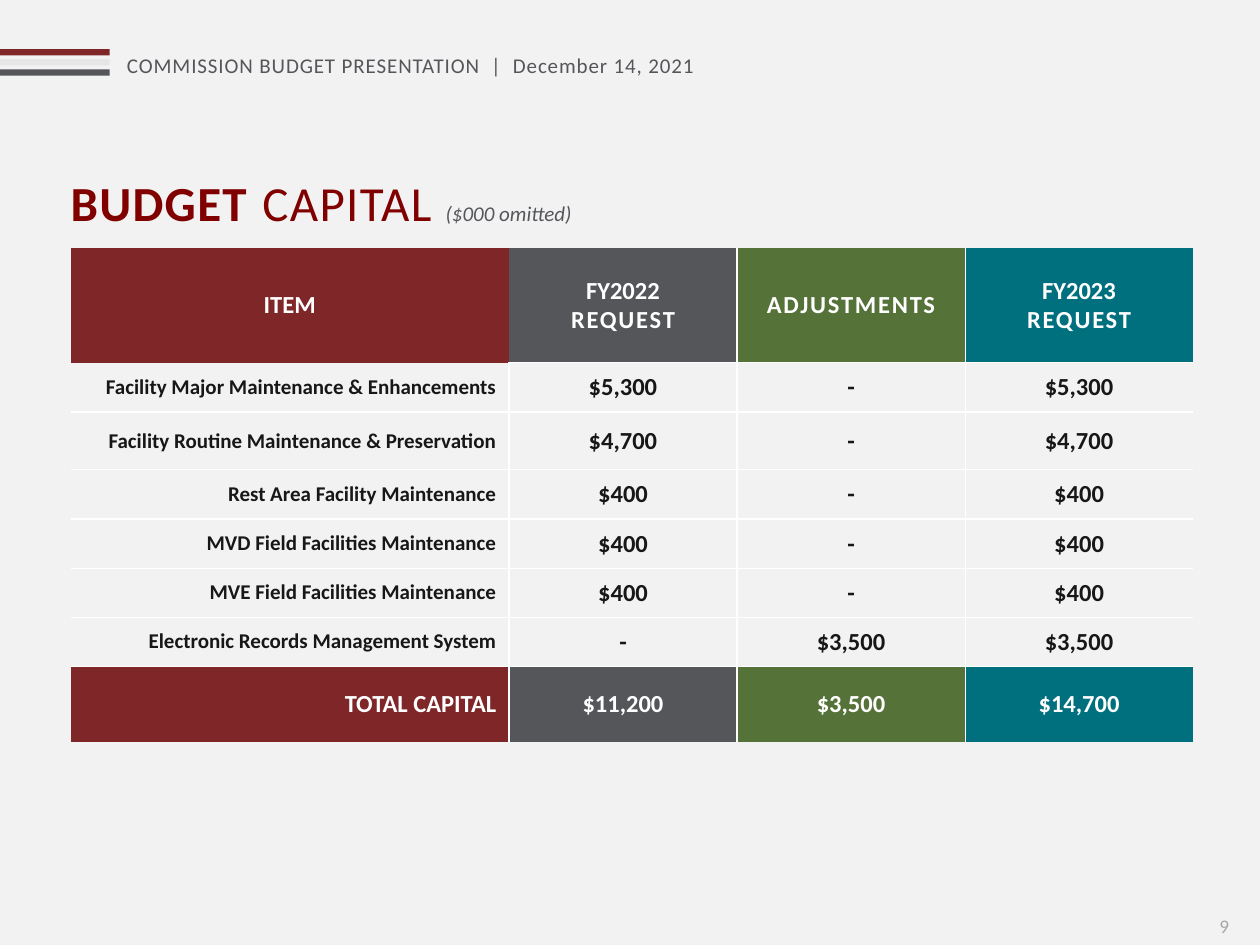
from lxml.etree import SubElement
from pptx import Presentation
from pptx.dml.color import RGBColor
from pptx.enum.shapes import MSO_SHAPE
from pptx.enum.text import MSO_ANCHOR, MSO_AUTO_SIZE, PP_ALIGN
from pptx.oxml.ns import qn
from pptx.util import Inches, Pt

BACKGROUND = RGBColor(0xF2, 0xF2, 0xF2)
WHITE = RGBColor(0xFF, 0xFF, 0xFF)
INK = RGBColor(0x18, 0x17, 0x17)
MAROON = RGBColor(0x80, 0x00, 0x00)
RED = RGBColor(0x7F, 0x26, 0x29)
GRAY = RGBColor(0x54, 0x56, 0x5A)
HEADER_GRAY = RGBColor(0x55, 0x56, 0x5A)
LIGHT_GRAY = RGBColor(0xE7, 0xE6, 0xE6)
NUMBER_GRAY = RGBColor(0xA7, 0xA8, 0xA9)
GREEN = RGBColor(0x55, 0x72, 0x38)
TEAL = RGBColor(0x00, 0x70, 0x7F)

FONT = "Calibri"
NO_STYLE = "{2D5ABB26-0587-4C30-8999-92F81FD0307C}"
COLUMN_COLORS = [RED, GRAY, GREEN, TEAL]
COLUMN_WIDTHS = [3.48, 1.81, 1.81, 1.81]
ROW_HEIGHTS = [0.91, 0.39, 0.46, 0.39, 0.39, 0.39, 0.39, 0.6]

HEADINGS = [["ITEM"], ["FY2022", "REQUEST"], ["ADJUSTMENTS"], ["FY2023", "REQUEST"]]
SPACED_HEADINGS = {"REQUEST", "ADJUSTMENTS"}
ITEMS = [
    ["Facility Major Maintenance & Enhancements", "$5,300", "-", "$5,300"],
    ["Facility Routine Maintenance & Preservation", "$4,700", "-", "$4,700"],
    ["Rest Area Facility Maintenance", "$400", "-", "$400"],
    ["MVD Field Facilities Maintenance", "$400", "-", "$400"],
    ["MVE Field Facilities Maintenance", "$400", "-", "$400"],
    ["Electronic Records Management System", "-", "$3,500", "$3,500"],
]
TOTALS = ["TOTAL CAPITAL", "$11,200", "$3,500", "$14,700"]


def add_text(paragraph, text, *, size, color, bold=False, italic=False,
             spacing=0, align=PP_ALIGN.LEFT):
    """Add one formatted run; spacing is in points."""
    paragraph.alignment = align
    run = paragraph.add_run()
    run.text = text
    font = run.font
    font.name, font.size = FONT, Pt(size)
    font.bold, font.italic = bold, italic
    font.color.rgb = color
    run._r.get_or_add_rPr().set("spc", str(round(spacing * 100)))


def add_text_box(slide, left, top, width, height, text, **text_format):
    frame = slide.shapes.add_textbox(
        Inches(left), Inches(top), Inches(width), Inches(height)).text_frame
    frame.word_wrap = True
    add_text(frame.paragraphs[0], text, **text_format)


def add_stripe(slide, top, color):
    shape = slide.shapes.add_shape(
        MSO_SHAPE.RECTANGLE, 0, Inches(top), Inches(0.87), Inches(0.05))
    shape.shadow.inherit = False
    shape.fill.solid()
    shape.fill.fore_color.rgb = color
    shape.line.fill.background()


def add_title(slide):
    title = slide.shapes.title
    title.left, title.top = Inches(0.46), Inches(1.26)
    title.width, title.height = Inches(9.02), Inches(0.64)
    frame = title.text_frame
    frame.vertical_anchor = MSO_ANCHOR.TOP
    frame.auto_size = MSO_AUTO_SIZE.NONE
    frame.word_wrap = True
    paragraph = frame.paragraphs[0]
    add_text(paragraph, "BUDGET", size=28, color=MAROON, bold=True, spacing=0.8)
    add_text(paragraph, " ", size=32, color=MAROON, bold=True, spacing=0.8)
    add_text(paragraph, "CAPITAL ", size=28, color=MAROON, spacing=0.8)
    add_text(paragraph, "($000 omitted)", size=12, color=GRAY, italic=True)


def add_borders(cell, sides):
    """Draw thin white lines on the given sides (L, R, T, B, in that order)."""
    properties = cell._tc.get_or_add_tcPr()
    for side in sides:
        line = SubElement(properties, qn(f"a:ln{side}"), w=str(Pt(0.75)))
        fill = SubElement(line, qn("a:solidFill"))
        SubElement(fill, qn("a:srgbClr"), val=str(WHITE))


def inner_sides(row, column):
    """Sides that face another cell; the ITEM heading has no lines."""
    if (row, column) == (0, 0):
        return ""
    sides = {
        "L": column > 0 and (row, column) != (0, 1),
        "R": column < len(COLUMN_WIDTHS) - 1,
        "T": row > 0 and (row, column) != (1, 0),
        "B": row < len(ROW_HEIGHTS) - 1,
    }
    return "".join(side for side, shown in sides.items() if shown)


def fill_cell(cell, lines, *, fill=None, **text_format):
    cell.vertical_anchor = MSO_ANCHOR.MIDDLE
    if fill is None:
        cell.fill.background()
    else:
        cell.fill.solid()
        cell.fill.fore_color.rgb = fill
    frame = cell.text_frame
    for index, line in enumerate(lines):
        paragraph = frame.add_paragraph() if index else frame.paragraphs[0]
        add_text(paragraph, line, bold=True,
                 spacing=1 if line in SPACED_HEADINGS else 0, **text_format)


def add_budget_table(slide):
    table_frame = slide.shapes.add_table(
        len(ROW_HEIGHTS), len(COLUMN_WIDTHS), Inches(0.56), Inches(1.97),
        Inches(sum(COLUMN_WIDTHS)), Inches(sum(ROW_HEIGHTS)))
    table = table_frame.table
    table._tbl.tblPr.find(qn("a:tableStyleId")).text = NO_STYLE
    table.horz_banding = False
    for column, width in zip(table.columns, COLUMN_WIDTHS):
        column.width = Inches(width)
    for row, height in zip(table.rows, ROW_HEIGHTS):
        row.height = Inches(height)

    rows = [HEADINGS] + [[[text] for text in texts] for texts in ITEMS + [TOTALS]]
    last = len(rows) - 1
    for r, row in enumerate(rows):
        for c, lines in enumerate(row):
            cell = table.cell(r, c)
            add_borders(cell, inner_sides(r, c))
            colored = r in (0, last)
            is_label = c == 0 and r > 0
            if r == 0:
                cell.margin_left = cell.margin_right = Inches(0.05)
            fill_cell(cell, lines,
                      fill=COLUMN_COLORS[c] if colored else None,
                      color=WHITE if colored else INK,
                      size=12 if is_label and not colored else 14,
                      align=PP_ALIGN.RIGHT if is_label else PP_ALIGN.CENTER)


def main():
    presentation = Presentation()
    presentation.slide_width, presentation.slide_height = Inches(10), Inches(7.5)
    slide = presentation.slides.add_slide(presentation.slide_layouts[5])
    slide.background.fill.solid()
    slide.background.fill.fore_color.rgb = BACKGROUND

    # Page header
    add_text_box(slide, 0.91, 0.37, 4.84, 0.5,
                 "COMMISSION BUDGET PRESENTATION  |  December 14, 2021",
                 size=12, color=HEADER_GRAY, spacing=0.5)
    for index, color in enumerate([RED, LIGHT_GRAY, GRAY]):
        add_stripe(slide, 0.39 + 0.08 * index, color)

    # Title and budget figures
    add_title(slide)
    add_budget_table(slide)

    # Page number
    add_text_box(slide, 9.58, 7.21, 0.42, 0.4, "9", size=11, color=NUMBER_GRAY)

    presentation.save("out.pptx")


if __name__ == "__main__":
    main()
